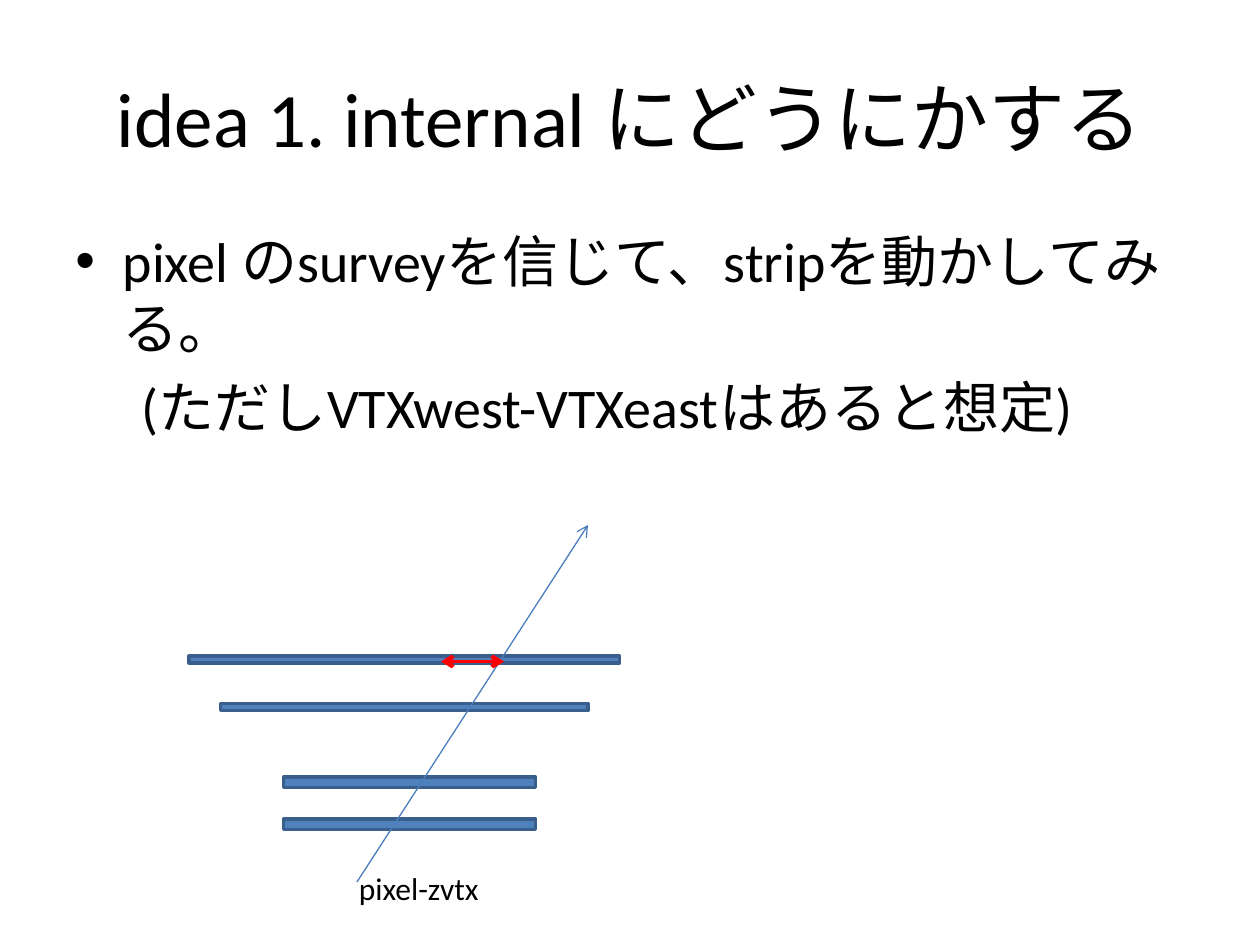
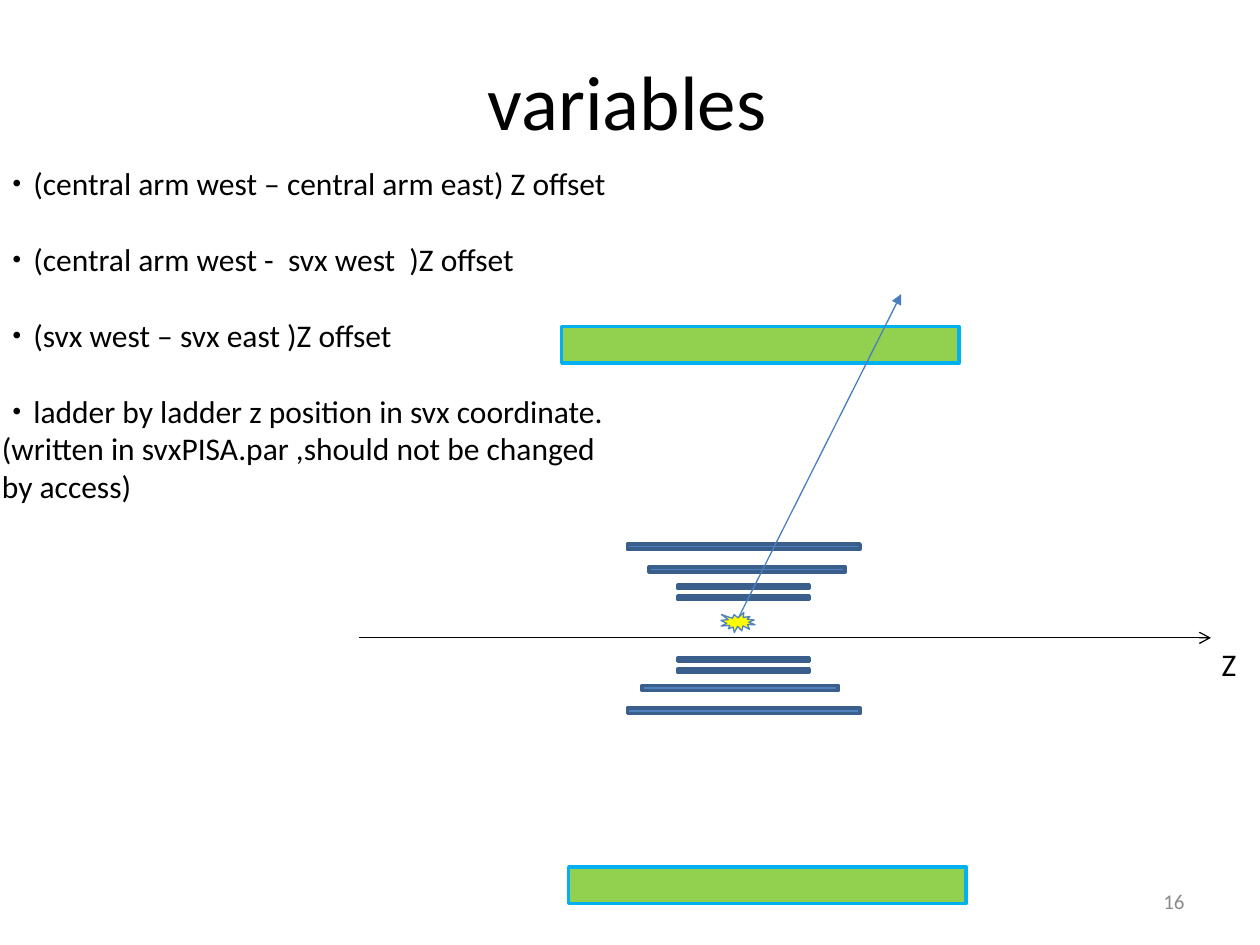
from lxml import etree
from pptx import Presentation
from pptx.dml.color import RGBColor
from pptx.enum.shapes import MSO_CONNECTOR, MSO_SHAPE
from pptx.enum.text import MSO_ANCHOR, PP_ALIGN
from pptx.oxml.ns import qn
from pptx.util import Pt

LEFT, CENTER, RIGHT = PP_ALIGN.LEFT, PP_ALIGN.CENTER, PP_ALIGN.RIGHT
TOP, MIDDLE = MSO_ANCHOR.TOP, MSO_ANCHOR.MIDDLE
RECTANGLE, BURST = MSO_SHAPE.RECTANGLE, MSO_SHAPE.EXPLOSION1
STRAIGHT = MSO_CONNECTOR.STRAIGHT

FONT = "Calibri"
BLACK, GRAY, RED, YELLOW = "000000", "8C8C8C", "FF0000", "FFFF00"
LADDER_FILL, LADDER_LINE, TRACK = "4F81BD", "3A5F8C", "4B7EBC"
ARM_FILL, ARM_LINE = "92D050", "00B0F0"


def color(value):
    return RGBColor.from_string(value)


def write(paragraph, text, size=18, ink=BLACK, align=LEFT, before=0,
          margin=0, indent=0, bullet=None):
    paragraph.alignment = align
    paragraph.space_before = Pt(before)
    properties = paragraph._p.get_or_add_pPr()
    properties.set("marL", str(Pt(margin)))
    properties.set("indent", str(Pt(indent)))
    if bullet:
        etree.SubElement(properties, qn("a:buFont"), typeface="Arial")
        etree.SubElement(properties, qn("a:buChar"), char=bullet)
    run = paragraph.add_run()
    run.text = text
    run.font.name = FONT
    run.font.size = Pt(size)
    run.font.color.rgb = color(ink)


class Deck:
    """Holds the presentation, its shared style and the current slide."""

    def __init__(self):
        self.presentation = Presentation()
        self.presentation.slide_width = Pt(720)
        self.presentation.slide_height = Pt(540)
        self.slide = None

    def new_slide(self, title, left, top):
        self.slide = self.presentation.slides.add_slide(self.presentation.slide_layouts[6])
        self.text(left, top, 648, 90, [(title, {"size": 44, "align": CENTER})], anchor=MIDDLE)

    def text(self, left, top, width, height, paragraphs, anchor=TOP, wrap=True):
        box = self.slide.shapes.add_textbox(Pt(left), Pt(top), Pt(width), Pt(height))
        frame = box.text_frame
        frame.word_wrap = wrap
        frame.vertical_anchor = anchor
        for index, (content, style) in enumerate(paragraphs):
            paragraph = frame.add_paragraph() if index else frame.paragraphs[0]
            write(paragraph, content, **style)

    def shape(self, left, top, width, height, fill=LADDER_FILL, line=LADDER_LINE,
              weight=2, kind=RECTANGLE):
        shape = self.slide.shapes.add_shape(kind, Pt(left), Pt(top), Pt(width), Pt(height))
        shape.shadow.inherit = False
        shape.fill.solid()
        shape.fill.fore_color.rgb = color(fill)
        shape.line.color.rgb = color(line)
        shape.line.width = Pt(weight)

    def arrow(self, start, end, ink, weight=0.75, tip="arrow", double=False):
        points = [Pt(value) for value in (*start, *end)]
        connector = self.slide.shapes.add_connector(STRAIGHT, *points)
        connector.line.color.rgb = color(ink)
        connector.line.width = Pt(weight)
        line = connector.line._get_or_add_ln()
        for side in ("a:headEnd", "a:tailEnd") if double else ("a:tailEnd",):
            etree.SubElement(line, qn(side), type=tip)
        etree.SubElement(connector._element.spPr, qn("a:effectLst"))


def build_idea(deck):
    deck.new_slide("idea 1. internal にどうにかする", 36, 21.6)
    deck.text(36, 126, 648, 356.4, [
        ("pixel のsurveyを信じて、stripを動かしてみる。",
         {"size": 32, "before": 6.4, "margin": 27, "indent": -27, "bullet": "•"}),
        ("(ただしVTXwest-VTXeastはあると想定)",
         {"size": 32, "before": 6.4, "margin": 38}),
    ])
    ladders = [(108, 375, 246, 4), (126, 402, 210, 4), (162, 444, 144, 6), (162, 468, 144, 6)]
    for ladder in ladders:
        deck.shape(*ladder)
    deck.arrow((204, 504), (336, 300), TRACK)
    deck.text(198, 493, 129, 29, [("pixel-zvtx", {})])
    deck.arrow((288, 378), (252, 378), RED, weight=2.25, double=True)


def build_variables(deck):
    deck.new_slide("variables", 34.5, 12)
    deck.text(516, 500.5, 168, 28.8, [("16", {"size": 12, "ink": GRAY, "align": RIGHT})],
              anchor=MIDDLE)
    deck.arrow((205, 364.5), (692, 364.5), BLACK)
    deck.text(691, 365, 23, 25, [("Z", {})], wrap=False)

    center_x, center_y = 425, 359.3
    ladders = [(0, 16.6, 75, 2), (0, 23, 75, 2), (2, 32.4, 112, 3), (0, 45.4, 133, 3)]
    for shift, gap, width, height in ladders:
        deck.shape(center_x + shift - width / 2, center_y - gap - height, width, height)
        deck.shape(center_x - shift - width / 2, center_y + gap, width, height)
    for left, top in ((321, 186.5), (325, 495.3)):
        deck.shape(left, top, 227, 21, fill=ARM_FILL, line=ARM_LINE)

    deck.arrow((422, 353), (515, 168), TRACK, tip="triangle")
    deck.shape(412, 350, 19.5, 11.5, fill=YELLOW, line=LADDER_FILL, weight=0.75, kind=BURST)
    spaced = {"before": 21.8}
    deck.text(-6, 90, 372, 204, [
        ("・(central arm west – central arm east) Z offset", {}),
        ("・(central arm west -  svx west  )Z offset", spaced),
        ("・(svx west – svx east )Z offset", spaced),
        ("・ladder by ladder z position in svx coordinate.", spaced),
        ("(written in svxPISA.par ,should not be changed by access)", {}),
    ])


def main():
    deck = Deck()
    build_idea(deck)
    build_variables(deck)
    deck.presentation.save("out.pptx")


if __name__ == "__main__":
    main()
